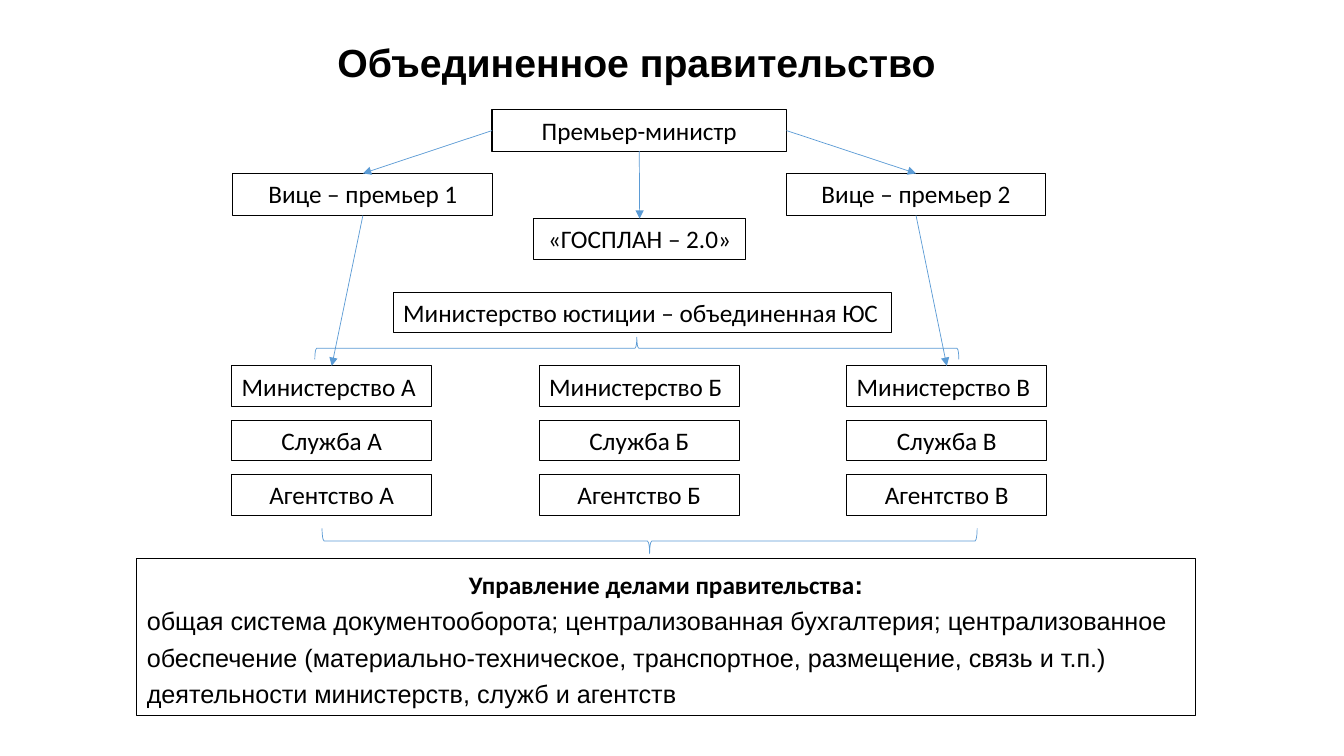
from lxml.etree import SubElement
from pptx import Presentation
from pptx.dml.color import RGBColor
from pptx.enum.shapes import MSO_CONNECTOR as Link, MSO_SHAPE as Preset
from pptx.enum.text import MSO_ANCHOR as Anchor, MSO_AUTO_SIZE as Fit, PP_ALIGN as Align
from pptx.oxml.ns import qn
from pptx.util import Cm, Pt


def write(para, text, size=18, font="Calibri", bold=False, align=Align.CENTER, spacing=None):
    para.alignment = align
    para.line_spacing = spacing
    span = para.add_run()
    span.text = text
    span.font.size = Pt(size)
    span.font.name = font
    span.font.bold = bold
    span.font.color.rgb = RGBColor.from_string("000000")


def outline(item, color, width):
    item.line.color.rgb = RGBColor.from_string(color)
    item.line.width = Pt(width)


deck = Presentation()
deck.slide_width, deck.slide_height = Cm(33.87), Cm(19.05)
page = deck.slides.add_slide(deck.slide_layouts[5])

title = page.shapes.title
title.left, title.top, title.width, title.height = Cm(6.25), Cm(1.02), Cm(19.58), Cm(1.22)
title.text_frame.auto_size = Fit.NONE
title.text_frame.vertical_anchor = Anchor.MIDDLE
write(title.text_frame.paragraphs[0], "Объединенное правительство",
      size=28, font="Arial", bold=True, spacing=0.9)

layout = [
    ("Премьер-министр", 12.4, 2.77, 7.42, 1.04, Align.CENTER),
    ("Вице – премьер 1", 5.87, 4.37, 6.55, 1.06, Align.CENTER),
    ("Вице – премьер 2", 19.81, 4.37, 6.55, 1.06, Align.CENTER),
    ("«ГОСПЛАН – 2.0»", 13.44, 5.51, 5.36, 1.02, Align.CENTER),
    ("Министерство юстиции – объединенная ЮС", 9.91, 7.37, 12.57, 1.02, Align.LEFT),
]
for column, letter in enumerate("АБВ"):
    for row, body in enumerate(["Министерство", "Служба", "Агентство"]):
        layout.append((f"{body} {letter}", 5.84 + 7.75 * column, 9.22 + 1.37 * row, 5.04, 1.02,
                       Align.CENTER if row else Align.LEFT))
layout.append(("Управление делами правительства", 3.45, 14.07, 26.67, 3.96, Align.CENTER))

boxes = {}
for text, left, top, width, height, align in layout:
    box = page.shapes.add_shape(Preset.RECTANGLE, Cm(left), Cm(top), Cm(width), Cm(height))
    box.shadow.inherit = False
    box.fill.background()
    outline(box, "000000", 0.75)
    box.text_frame.word_wrap = True
    box.text_frame.auto_size = Fit.SHAPE_TO_FIT_TEXT
    box.text_frame.vertical_anchor = Anchor.TOP
    if not text.startswith("Управление"):
        write(box.text_frame.paragraphs[0], text, align=align)
    boxes[text] = box

office = boxes["Управление делами правительства"].text_frame
write(office.paragraphs[0], "Управление делами правительства", bold=True, spacing=1.2)
write(office.paragraphs[0], ":", font="Arial", bold=True, spacing=1.2)
write(office.add_paragraph(),
      "общая система документооборота; централизованная бухгалтерия; централизованное "
      "обеспечение (материально-техническое, транспортное, размещение, связь и т.п.) "
      "деятельности министерств, служб и агентств",
      font="Arial", align=Align.LEFT, spacing=1.2)

for left, top, width, height, angle in [(15.77, 0.66, 0.56, 16.23, 270),
                                        (16.05, 5.38, 0.64, 16.51, 90)]:
    brace = page.shapes.add_shape(Preset.RIGHT_BRACE, Cm(left), Cm(top), Cm(width), Cm(height))
    brace.rotation = angle
    brace.shadow.inherit = False
    brace.fill.background()
    outline(brace, "5B9BD5", 0.5)

for start, start_side, end in [
    ("Премьер-министр", 2, "«ГОСПЛАН – 2.0»"),
    ("Премьер-министр", 1, "Вице – премьер 1"),
    ("Премьер-министр", 3, "Вице – премьер 2"),
    ("Вице – премьер 1", 2, "Министерство А"),
    ("Вице – премьер 2", 2, "Министерство В"),
]:
    arrow = page.shapes.add_connector(Link.STRAIGHT, 0, 0, 0, 0)
    arrow.begin_connect(boxes[start], start_side)
    arrow.end_connect(boxes[end], 0)
    outline(arrow, "5B9BD5", 0.5)
    SubElement(arrow.line._get_or_add_ln(), qn("a:tailEnd"), type="triangle")
    SubElement(arrow._element.spPr, qn("a:effectLst"))

deck.save("out.pptx")
